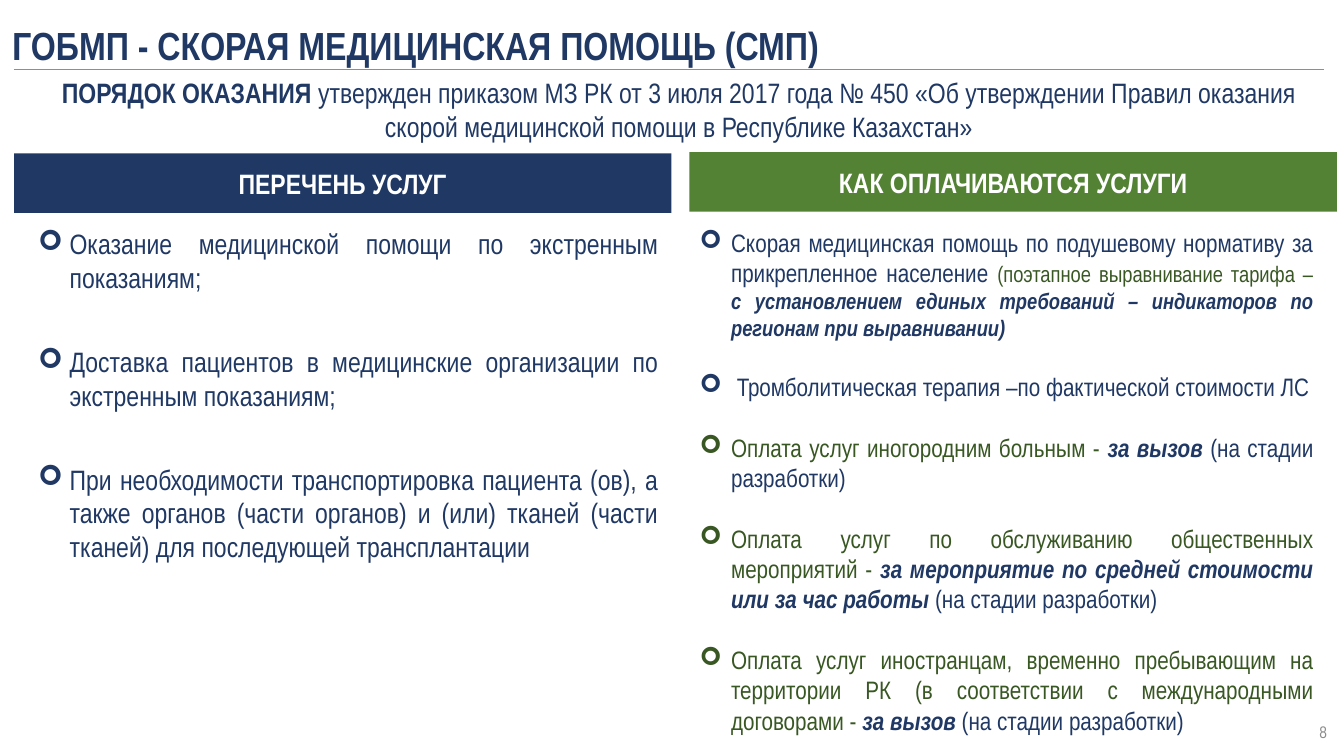
import pptx
import pptx.util
import pptx.dml.color
import pptx.enum.shapes
import pptx.enum.text
import lxml.etree

Pt = pptx.util.Pt
ALIGN = pptx.enum.text.PP_ALIGN
ANCHOR = pptx.enum.text.MSO_ANCHOR

FONT = "Arial Narrow"
NAVY, GREEN, DARK_GREEN = "203864", "548235", "385723"
WHITE, GREY, BLUE = "FFFFFF", "8C8C8C", "5B9BD5"

# A run is (text, size, colour, emphasis): "b" is bold, "i" is italic.
TITLE = [("ГОБМП - СКОРАЯ МЕДИЦИНСКАЯ ПОМОЩЬ (СМП)", 28, NAVY, "b")]
ORDER = [
    ("ПОРЯДОК ОКАЗАНИЯ ", 20, NAVY, "b"),
    ("утвержден приказом МЗ РК от 3 июля 2017 года № 450 «Об утверждении "
     "Правил оказания скорой медицинской помощи в Республике Казахстан»", 20, NAVY, ""),
]
PAGE = [("8", 12, GREY, "")]
DRAFT = ("(на стадии разработки)", 18, NAVY, "")
PER_CALL = ("за вызов ", 18, NAVY, "bi")

SERVICES = [
    [("Оказание медицинской помощи по экстренным показаниям;", 20, NAVY, "")],
    [("Доставка пациентов в медицинские организации по экстренным показаниям;", 20, NAVY, "")],
    [("При необходимости транспортировка пациента (ов), а также органов (части органов) "
      "и (или) тканей (части тканей) для последующей трансплантации", 20, NAVY, "")],
]
PAYMENTS = [
    [("Скорая медицинская помощь по подушевому нормативу за прикрепленное население ",
      18, NAVY, ""),
     ("(поэтапное выравнивание тарифа – ", 16, DARK_GREEN, ""),
     ("с установлением единых требований – индикаторов по регионам при выравнивании)",
      16, NAVY, "bi")],
    [(" Тромболитическая терапия –по фактической стоимости ЛС", 18, NAVY, "")],
    [("Оплата услуг иногородним больным - ", 18, DARK_GREEN, ""), PER_CALL, DRAFT],
    [("Оплата услуг по обслуживанию общественных мероприятий - ", 18, DARK_GREEN, ""),
     ("за мероприятие по средней стоимости или за час работы ", 18, NAVY, "bi"), DRAFT],
    [("Оплата услуг иностранцам, временно пребывающим на территории РК "
      "(в соответствии с международными договорами - ", 18, DARK_GREEN, ""), PER_CALL, DRAFT],
]

# header text, header fill, header box, items, list box, left margin, gap between items
COLUMNS = [
    ("ПЕРЕЧЕНЬ УСЛУГ", NAVY, (10, 109.5, 469.5, 42.5),
     SERVICES, (11.5, 158.5, 466, 250), 31, 36),
    ("КАК ОПЛАЧИВАЮТСЯ УСЛУГИ", GREEN, (492.5, 108.75, 462.5, 42.5),
     PAYMENTS, (492.5, 158.5, 453, 381.5), 22.5, 21.75),
]
BULLET_INDENT = 22.5


def rgb(color):
    return pptx.dml.color.RGBColor.from_string(color)


def place(sp, box):
    sp.left, sp.top, sp.width, sp.height = map(Pt, box)


def write(p, runs, align):
    p.alignment = align
    p.line_spacing = 1.0
    p.space_before = Pt(0)
    for text, size, color, emphasis in runs:
        r = p.add_run()
        r.text = text
        r.font.name = FONT
        r.font.size = Pt(size)
        r.font.bold = "b" in emphasis
        r.font.italic = "i" in emphasis
        r.font.color.rgb = rgb(color)


def write_line(sp, runs, align, anchor=ANCHOR.MIDDLE):
    """Fill a shape with a single paragraph."""
    tf = sp.text_frame
    tf.word_wrap = True
    tf.auto_size = pptx.enum.text.MSO_AUTO_SIZE.NONE
    tf.vertical_anchor = anchor
    write(tf.paragraphs[0], runs, align)


def set_bullet(p, margin):
    pPr = p._p.get_or_add_pPr()
    pPr.set("marL", str(Pt(margin)))
    pPr.set("indent", str(-Pt(BULLET_INDENT)))
    ns = pptx.oxml.ns.qn
    lxml.etree.SubElement(pPr, ns("a:buFont"), typeface="Wingdings")
    lxml.etree.SubElement(pPr, ns("a:buChar"), char="➢")


def write_list(sp, items, margin, gap):
    tf = sp.text_frame
    tf.word_wrap = True
    tf.auto_size = pptx.enum.text.MSO_AUTO_SIZE.NONE
    tf.vertical_anchor = ANCHOR.TOP
    for i, runs in enumerate(items):
        p = tf.add_paragraph() if i else tf.paragraphs[0]
        write(p, runs, ALIGN.JUSTIFY)
        if i:
            p.space_before = Pt(gap)
        set_bullet(p, margin)


def add_header(s, text, fill, box):
    sp = s.shapes.add_shape(pptx.enum.shapes.MSO_SHAPE.RECTANGLE, *map(Pt, box))
    sp.shadow.inherit = False
    sp.fill.solid()
    sp.fill.fore_color.rgb = rgb(fill)
    sp.line.fill.background()
    write_line(sp, [(text, 20, WHITE, "b")], ALIGN.CENTER)


def add_rule(s, x1, x2, y):
    line = s.shapes.add_connector(
        pptx.enum.shapes.MSO_CONNECTOR.STRAIGHT, Pt(x1), Pt(y), Pt(x2), Pt(y))
    line.line.color.rgb = rgb(BLUE)
    line.line.width = Pt(0.5)
    lxml.etree.SubElement(line._element.spPr, pptx.oxml.ns.qn("a:effectLst"))


def main():
    prs = pptx.Presentation()
    prs.slide_width, prs.slide_height = Pt(960), Pt(540)
    s = prs.slides.add_slide(prs.slide_layouts.get_by_name("Two Content"))

    title, *bodies = s.placeholders
    place(title, (1.5, 10, 957, 44))
    write_line(title, TITLE, ALIGN.LEFT)
    add_rule(s, 10, 945.5, 49.5)

    order = s.shapes.add_textbox(*map(Pt, (20, 50.5, 930, 55.5)))
    write_line(order, ORDER, ALIGN.CENTER, ANCHOR.TOP)

    for body, (header, fill, header_box, items, box, margin, gap) in zip(bodies, COLUMNS):
        add_header(s, header, fill, header_box)
        place(body, box)
        write_list(body, items, margin, gap)

    page = s.shapes.add_textbox(*map(Pt, (926, 508.5, 29, 29)))
    write_line(page, PAGE, ALIGN.RIGHT)

    prs.save("out.pptx")


if __name__ == "__main__":
    main()
